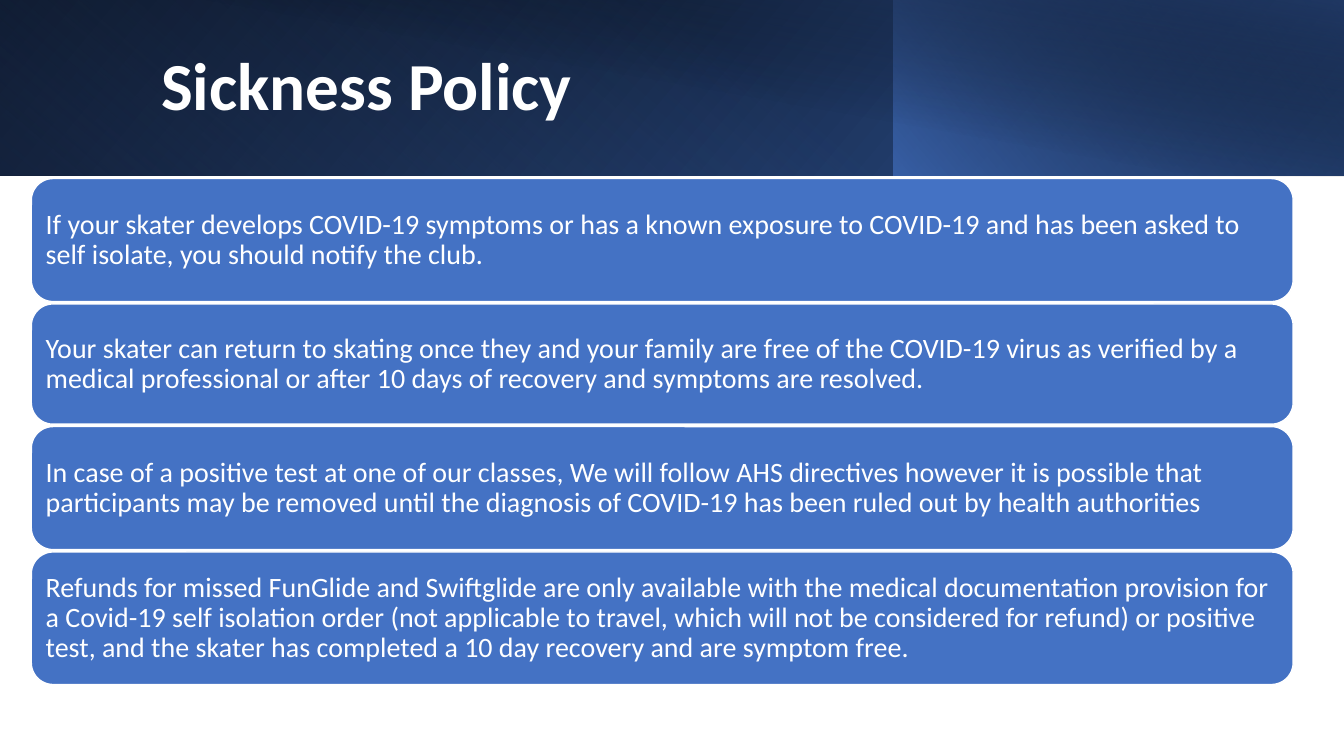
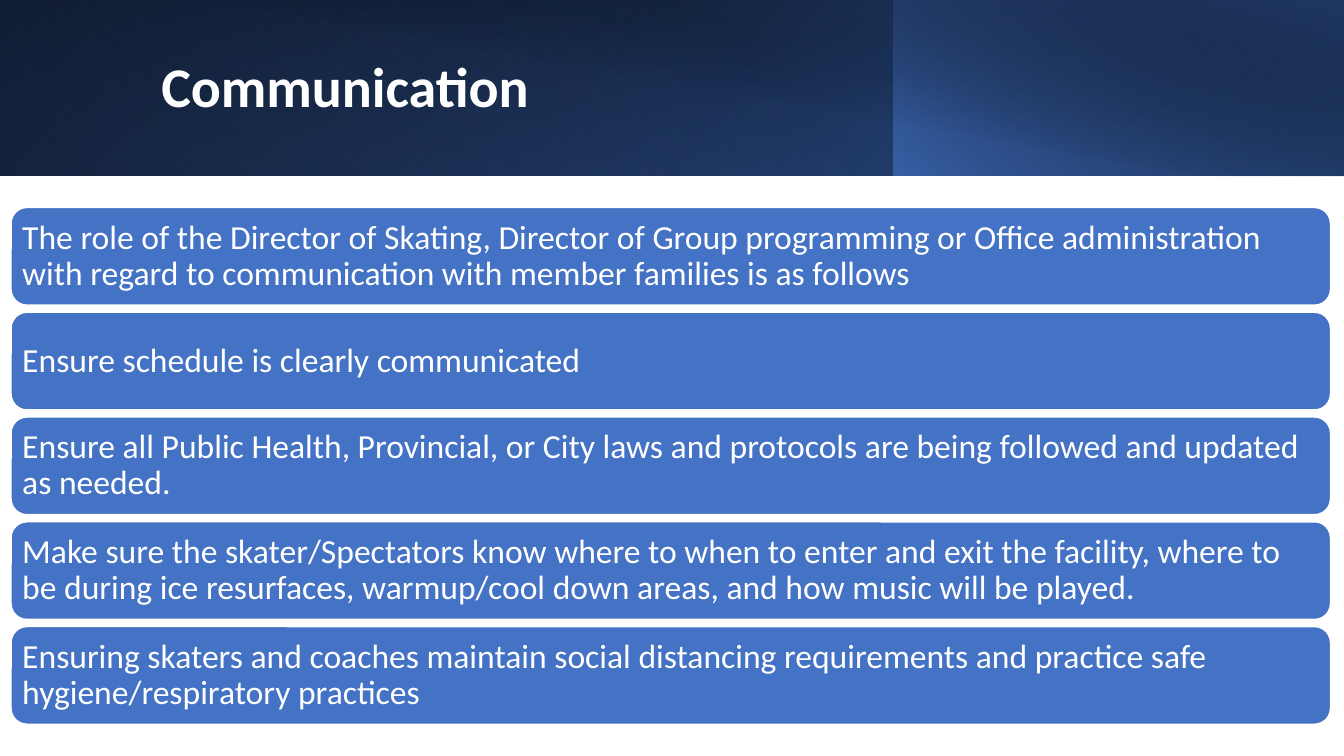
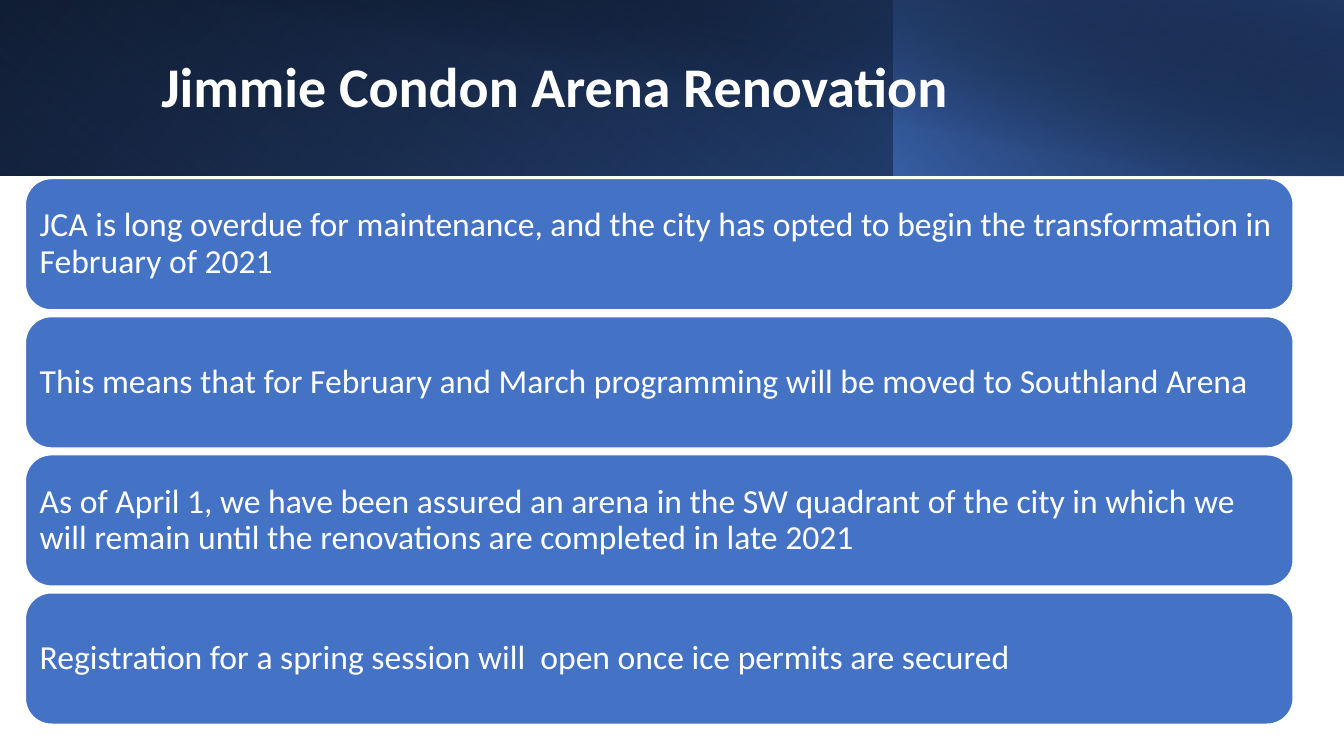
from lxml import etree
from pptx import Presentation
from pptx.dml.color import RGBColor
from pptx.enum.shapes import MSO_SHAPE as Preset
from pptx.enum.text import MSO_ANCHOR as Anchor, PP_ALIGN as Align
from pptx.oxml.ns import qn
from pptx.util import Cm, Pt

FONT = "Calibri"
WHITE = "FFFFFF"
BLUE = "4472C4"
NAVY = "203864"
BLACK = "000000"

# Header layers, back to front: box in cm, rotation, flip, angle,
# gradient stops as (position %, colour, opacity %)
HEADER_LAYERS = [
    ((0, 0, 33.87, 4.42), 0, True, 140, [(0, BLACK, 100), (100, "2F5597", 100)]),
    ((0, 0, 22.56, 4.42), 180, True, 230, [(20, BLUE, 0), (100, NAVY, 55)]),
    ((22.53, 0, 11.34, 4.42), 0, True, 220, [(0, BLUE, 66), (100, BLACK, 30)]),
    ((1.27, 0, 32.6, 4.45), 0, False, 280, [(50, BLACK, 0), (99, NAVY, 52)]),
]
TITLE_BOX = (3.81, 0.81, 27.48, 2.87)

# Panels are stacked from the top; lengths in cm, text sizes in points
SLIDES = [
    {
        "title": "Sickness Policy", "title_size": 48, "text_size": 20,
        "left": 0.79, "top": 4.5, "width": 31.8, "gap": 0.06,
        "radius": 0.55, "inset": 0.36,
        "panels": [
            (3.1, "If your skater develops COVID-19 symptoms or has a known exposure to "
                  "COVID-19 and has been asked to self isolate, you should notify the club."),
            (3.03, "Your skater can return to skating once they and your family are free of "
                   "the COVID-19 virus as verified by a medical professional or after 10 days "
                   "of recovery and symptoms are resolved."),
            (3.1, "In case of a positive test at one of our classes, We will follow AHS "
                  "directives however it is possible that participants may be removed until "
                  "the diagnosis of COVID-19 has been ruled out by health authorities"),
            (3.34, "Refunds for missed FunGlide and Swiftglide are only available with the "
                   "medical documentation provision for a Covid-19 self isolation order (not "
                   "applicable to travel, which will not be considered for refund) or positive "
                   "test, and the skater has completed a 10 day recovery and are symptom free."),
        ],
    },
    {
        "title": "Communication", "title_size": 40, "text_size": 24,
        "left": 0.28, "top": 5.23, "width": 33.25, "gap": 0.18,
        "radius": 0.4, "inset": 0.28,
        "panels": [(2.46, text) for text in (
            "The role of the Director of Skating, Director of Group programming or Office "
            "administration with regard to communication with member families is as follows",
            "Ensure schedule is clearly communicated",
            "Ensure all Public Health, Provincial, or City laws and protocols are being "
            "followed and updated as needed.",
            "Make sure the skater/Spectators know where to when to enter and exit the "
            "facility, where to be during ice resurfaces, warmup/cool down areas, and how "
            "music will be played.",
            "Ensuring skaters and coaches maintain social distancing requirements and "
            "practice safe hygiene/respiratory practices",
        )],
    },
    {
        "title": "Jimmie Condon Arena Renovation", "title_size": 40, "text_size": 24,
        "left": 0.64, "top": 4.5, "width": 31.95, "gap": 0.17,
        "radius": 0.66, "inset": 0.36,
        "panels": [(3.31, text) for text in (
            "JCA is long overdue for maintenance, and the city has opted to begin the "
            "transformation in February of 2021",
            "This means that for February and March programming will be moved to "
            "Southland Arena",
            "As of April 1, we have been assured an arena in the SW quadrant of the city in "
            "which we will remain until the renovations are completed in late 2021",
            "Registration for a spring session will  open once ice permits are secured",
        )],
    },
]


def rgb(colour):
    return RGBColor.from_string(colour)


def add_box(slide, preset, box):
    shape = slide.shapes.add_shape(preset, *(Cm(length) for length in box))
    shape.shadow.inherit = False
    return shape


def set_gradient(shape, angle, stops):
    """Linear gradient with an opacity for each stop."""
    gradient = etree.Element(qn("a:gradFill"), rotWithShape="1")
    stop_list = etree.SubElement(gradient, qn("a:gsLst"))
    for position, colour, opacity in stops:
        stop = etree.SubElement(stop_list, qn("a:gs"), pos=str(position * 1000))
        value = etree.SubElement(stop, qn("a:srgbClr"), val=colour)
        etree.SubElement(value, qn("a:alpha"), val=str(opacity * 1000))
    etree.SubElement(gradient, qn("a:lin"), ang=str(angle * 60000), scaled="0")
    shape.element.spPr.find(qn("a:prstGeom")).addnext(gradient)


def write_text(shape, text, size, bold=False):
    frame = shape.text_frame
    frame.word_wrap = True
    frame.vertical_anchor = Anchor.MIDDLE
    paragraph = frame.paragraphs[0]
    paragraph.alignment = Align.LEFT
    paragraph.line_spacing = 0.9
    run = paragraph.add_run()
    run.text = text
    run.font.name = FONT
    run.font.size = Pt(size)
    run.font.bold = bold
    run.font.color.rgb = rgb(WHITE)


def add_header(slide, text, size):
    for box, rotation, flipped, angle, stops in HEADER_LAYERS:
        layer = add_box(slide, Preset.RECTANGLE, box)
        layer.rotation = rotation
        layer.line.fill.background()
        if flipped:
            layer.element.spPr.find(qn("a:xfrm")).set("flipH", "1")
        set_gradient(layer, angle, stops)

    # The title goes in front of the layers
    title = slide.shapes.title
    title.left, title.top, title.width, title.height = (Cm(n) for n in TITLE_BOX)
    write_text(title, text, size, bold=True)
    title.element.getparent().append(title.element)


def add_panels(slide, content):
    # A rounded rectangle already indents its text by part of the radius
    margin = Cm(content["inset"] - 0.29 * content["radius"])
    top = content["top"]
    for height, text in content["panels"]:
        box = (content["left"], top, content["width"], height)
        panel = add_box(slide, Preset.ROUNDED_RECTANGLE, box)
        panel.adjustments[0] = content["radius"] / height
        panel.fill.solid()
        panel.fill.fore_color.rgb = rgb(BLUE)
        panel.line.color.rgb = rgb(WHITE)
        panel.line.width = Pt(1)
        frame = panel.text_frame
        frame.margin_left = frame.margin_right = margin
        frame.margin_top = frame.margin_bottom = margin
        write_text(panel, text, content["text_size"])
        top += height + content["gap"]


def main():
    presentation = Presentation()
    presentation.slide_width = Cm(33.87)
    presentation.slide_height = Cm(19.05)
    title_only = presentation.slide_layouts[5]
    for content in SLIDES:
        slide = presentation.slides.add_slide(title_only)
        add_header(slide, content["title"], content["title_size"])
        add_panels(slide, content)
    presentation.save("out.pptx")


if __name__ == "__main__":
    main()
